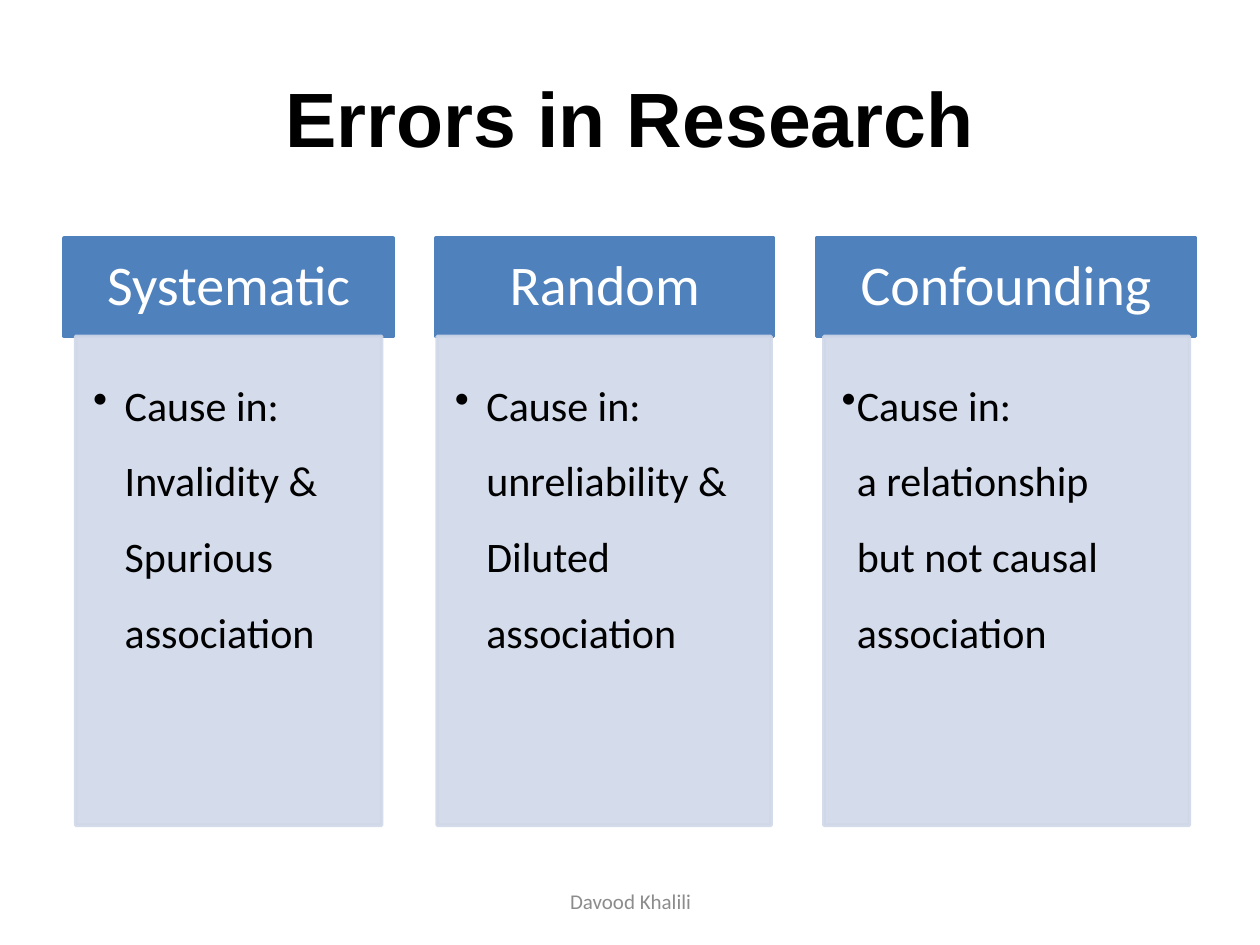
from lxml import etree
from pptx import Presentation
from pptx.dml.color import RGBColor
from pptx.enum.shapes import MSO_SHAPE
from pptx.enum.text import MSO_ANCHOR, PP_ALIGN
from pptx.oxml.ns import qn
from pptx.util import Inches, Pt

BLACK = RGBColor(0x00, 0x00, 0x00)
WHITE = RGBColor(0xFF, 0xFF, 0xFF)
GRAY = RGBColor(0x8C, 0x8C, 0x8C)
BLUE = RGBColor(0x4F, 0x81, 0xBD)
PALE_BLUE = RGBColor(0xD0, 0xD8, 0xE8)

HEADER_TOP, HEADER_HEIGHT = 1.89, 0.78
BODY_TOP, BODY_HEIGHT = HEADER_TOP + HEADER_HEIGHT, 3.88

COLUMNS = [
    ("Systematic", 0.51, 2.61, 0.6, 2.43, 0.25,
     "Cause in:\vInvalidity & Spurious association"),
    ("Random", 3.46, 2.68, 3.47, 2.65, 0.25,
     "Cause in: unreliability & Diluted association"),
    ("Confounding", 6.48, 3.01, 6.54, 2.9, 0.12,
     "Cause in:\va relationship\vbut not causal association"),
]


def add_panel(left, top, width, height, color, margins, anchor):
    shape = slide.shapes.add_shape(
        MSO_SHAPE.RECTANGLE, Inches(left), Inches(top), Inches(width), Inches(height))
    shape.shadow.inherit = False
    shape.fill.solid()
    shape.fill.fore_color.rgb = color
    shape.line.color.rgb = color
    shape.line.width = Pt(2)
    frame = shape.text_frame
    frame.word_wrap = True
    frame.vertical_anchor = anchor
    frame.margin_left, frame.margin_top, frame.margin_right, frame.margin_bottom = map(Inches, margins)
    return shape


def write(paragraph, text, size, color, alignment, font="Calibri", bold=False):
    paragraph.text = text
    paragraph.alignment = alignment
    for run in paragraph.runs:
        run.font.name = font
        run.font.size = Pt(size)
        run.font.bold = bold
        run.font.color.rgb = color


presentation = Presentation()
presentation.slide_width = Inches(10)
presentation.slide_height = Inches(7.5)
slide = presentation.slides.add_slide(presentation.slide_layouts[5])

title = slide.shapes.title
title.left, title.top, title.width, title.height = map(Inches, (0.5, 0.3, 9, 1.25))
title.text_frame.vertical_anchor = MSO_ANCHOR.MIDDLE
write(title.text_frame.paragraphs[0], "Errors in Research", 44, BLACK,
      PP_ALIGN.CENTER, font="Arial", bold=True)

for heading, header_left, header_width, body_left, body_width, indent, cause in COLUMNS:
    header = add_panel(header_left, HEADER_TOP, header_width, HEADER_HEIGHT, BLUE,
                       (0.25, 0.14, 0.25, 0.14), MSO_ANCHOR.MIDDLE)
    paragraph = header.text_frame.paragraphs[0]
    paragraph.line_spacing = 0.9
    write(paragraph, heading, 32, WHITE, PP_ALIGN.CENTER)

    body = add_panel(body_left, BODY_TOP, body_width, BODY_HEIGHT, PALE_BLUE,
                     (0.14, 0.14, 0.19, 0.21), MSO_ANCHOR.TOP)
    for color in body._element.spPr.iter(qn("a:srgbClr")):
        etree.SubElement(color, qn("a:alpha"), val="90000")
    paragraph = body.text_frame.paragraphs[0]
    properties = paragraph._p.get_or_add_pPr()
    properties.set("marL", str(Inches(indent)))
    properties.set("indent", str(-Inches(indent)))
    etree.SubElement(properties, qn("a:buChar"), char="•")
    paragraph.level = 1
    paragraph.line_spacing = 1.5
    write(paragraph, cause, 24, BLACK, PP_ALIGN.LEFT)

footer = slide.shapes.add_textbox(Inches(3.42), Inches(6.95), Inches(3.17), Inches(0.4))
footer.text_frame.word_wrap = True
footer.text_frame.vertical_anchor = MSO_ANCHOR.MIDDLE
write(footer.text_frame.paragraphs[0], "Davood Khalili", 12, GRAY, PP_ALIGN.CENTER)

presentation.save("out.pptx")
